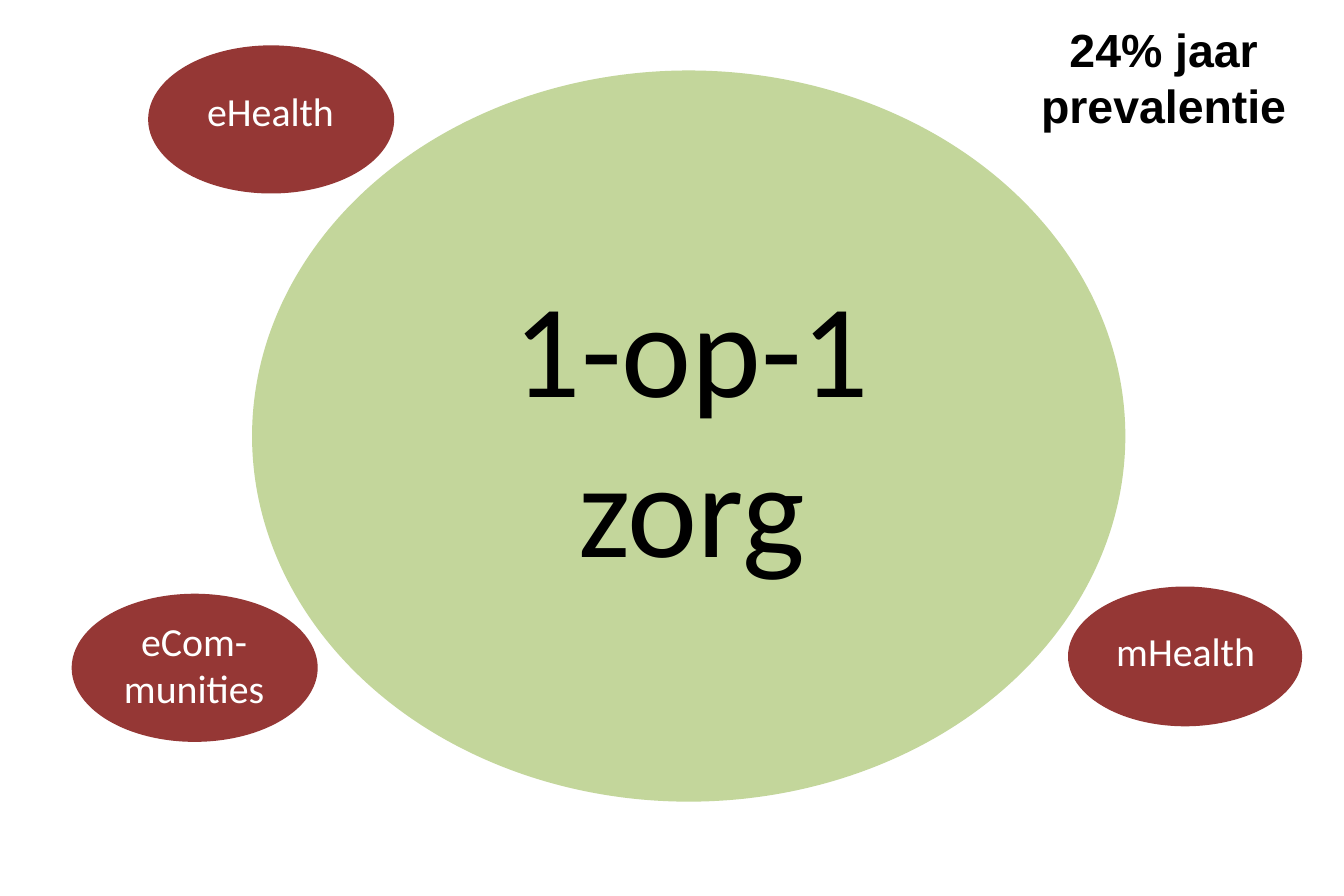
from pptx import Presentation, util as u
from pptx.dml.color import RGBColor
from pptx.enum import shapes, text

COLORS = {"red": "953735", "green": "C3D69B", "white": "FFFFFF", "black": "000000"}
COLS, ROWS = 45, 30

prs = Presentation()
prs.slide_width, prs.slide_height = u.Inches(11.25), u.Inches(7.5)
s = prs.slides.add_slide(prs.slide_layouts[6])


def place(col, row, cols, rows):
    """Turn grid cells into left, top, width and height."""
    cw, rh = prs.slide_width / COLS, prs.slide_height / ROWS
    return [round(v) for v in (col * cw, row * rh, cols * cw, rows * rh)]


def add_label(words, cells, size, font, color, bold=False):
    tf = s.shapes.add_textbox(*place(*cells)).text_frame
    tf.word_wrap = True
    p = tf.paragraphs[0]
    p.text = words
    p.alignment = text.PP_ALIGN.CENTER
    r = p.runs[0]
    r.font.size, r.font.name, r.font.bold = u.Pt(size), font, bold
    r.font.color.rgb = RGBColor.from_string(COLORS[color])


# words, ellipse cells, fill, label cells, text size, text colour
bubbles = [
    ("eHealth", (4.96, 1.52, 8.24, 4.96), "red", (5.44, 2.72, 7.24, 2), 24, "white"),
    ("1-op-1 zorg", (8.44, 2.36, 29.24, 24.48), "green", (13.96, 8.68, 18.4, 11.16), 80, "black"),
    ("mHealth", (35.76, 19.64, 7.84, 4.68), "red", (36.24, 20.8, 6.92, 2), 24, "white"),
    ("eCom-munities", (2.4, 19.88, 8.24, 4.96), "red", (2.88, 20.44, 7.24, 3.64), 24, "white"),
]
for words, cells, fill, label_cells, size, color in bubbles:
    sp = s.shapes.add_shape(shapes.MSO_SHAPE.OVAL, *place(*cells))
    sp.shadow.inherit = False
    sp.fill.solid()
    sp.fill.fore_color.rgb = RGBColor.from_string(COLORS[fill])
    sp.line.fill.background()
    add_label(words, label_cells, size, "Calibri", color)

add_label("24% jaar prevalentie", (33.56, 0.52, 10.8, 4.16), 28, "Arial", "black", bold=True)

prs.save("out.pptx")
